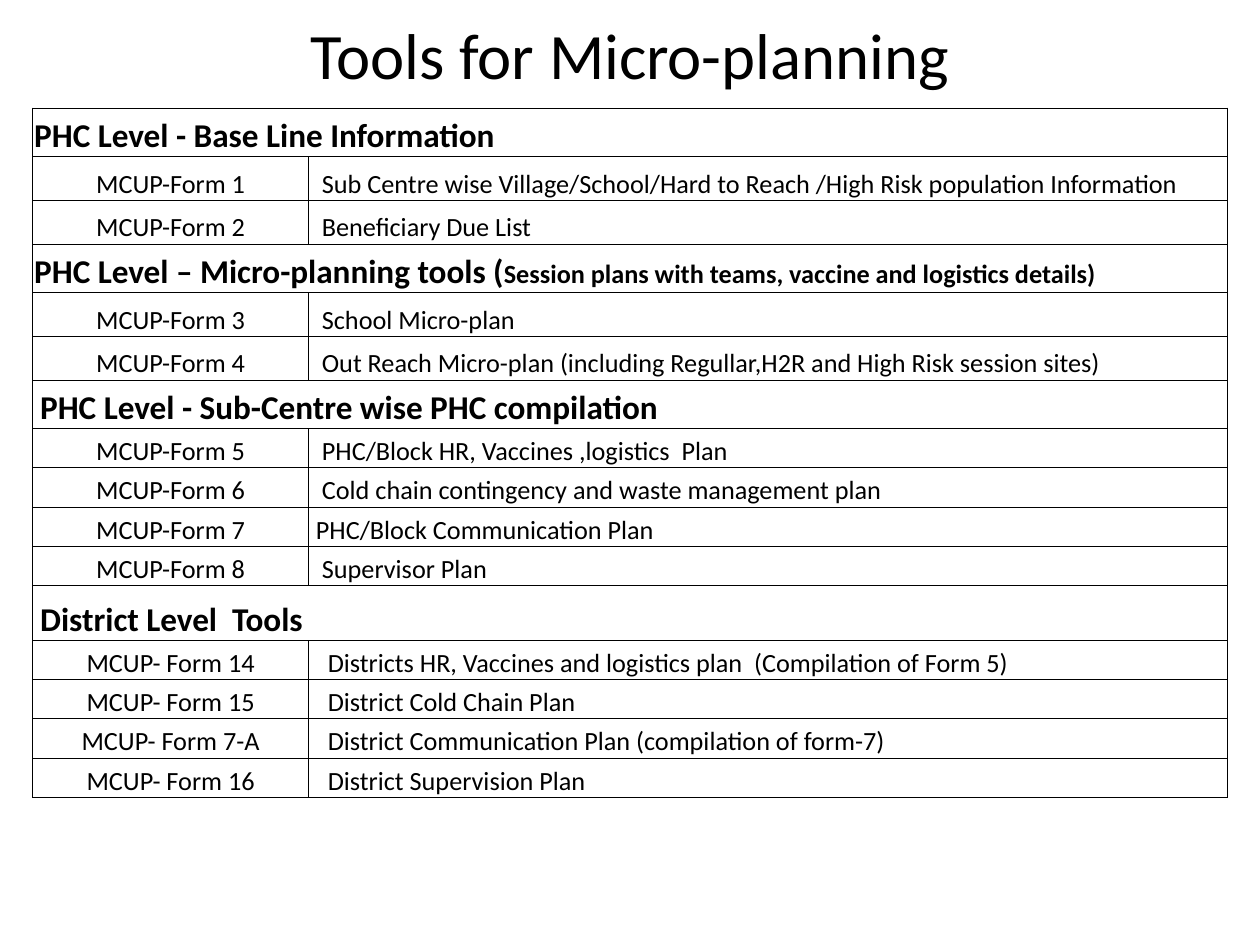
import pptx
import pptx.dml.color
import pptx.enum.text
import pptx.util
from lxml import etree
from pptx.oxml.ns import qn
from pptx.util import Cm

BLACK = pptx.dml.color.RGBColor(0x00, 0x00, 0x00)
FONT = "Calibri"
TITLE_SIZE, HEADING_SIZE, BODY_SIZE = 37, 19, 15

# Row heights and the step by which text is indented, in centimetres
HEADING, TALL_HEADING, TALL, SHORT = 0.98, 1.11, 0.88, 0.79
INSET, INDENT = 0.03, 0.12

# Each section: heading runs (text, size), heading indent, heading height,
# row height, and rows of (form, description, indent)
SECTIONS = [
    ([("PHC Level - Base Line Information", HEADING_SIZE)], 0, HEADING, TALL, [
        ("MCUP-Form 1", "Sub Centre wise Village/School/Hard to Reach /High Risk population Information", 2),
        ("MCUP-Form 2", "Beneficiary Due List", 2),
    ]),
    ([("PHC Level – Micro-planning tools (", HEADING_SIZE),
      ("Session plans with teams, vaccine and logistics details)", BODY_SIZE)], 0, HEADING, TALL, [
        ("MCUP-Form 3", "School Micro-plan", 2),
        ("MCUP-Form 4", "Out Reach Micro-plan (including Regullar,H2R and High Risk session sites)", 2),
    ]),
    ([("PHC Level - Sub-Centre wise PHC compilation", HEADING_SIZE)], 1, HEADING, SHORT, [
        ("MCUP-Form 5", "PHC/Block HR, Vaccines ,logistics  Plan", 2),
        ("MCUP-Form 6", "Cold chain contingency and waste management plan", 2),
        ("MCUP-Form 7", "PHC/Block Communication Plan", 1),
        ("MCUP-Form 8", "Supervisor Plan", 2),
    ]),
    ([("District Level  Tools", HEADING_SIZE)], 1, TALL_HEADING, SHORT, [
        ("MCUP- Form 14", "Districts HR, Vaccines and logistics plan  (Compilation of Form 5)", 3),
        ("MCUP- Form 15", "District Cold Chain Plan", 3),
        ("MCUP- Form 7-A", "District Communication Plan (compilation of form-7)", 3),
        ("MCUP- Form 16", "District Supervision Plan", 3),
    ]),
]


class SlideBuilder:
    """Holds the style and the current slide."""

    def __init__(self, slide):
        self.slide = slide

    def fill_paragraph(self, paragraph, runs, bold=False, centered=False):
        alignment = pptx.enum.text.PP_ALIGN
        paragraph.alignment = alignment.CENTER if centered else alignment.LEFT
        font = paragraph.font
        font.name, font.bold = FONT, bold
        font.size = pptx.util.Pt(runs[0][1])
        font.color.rgb = BLACK
        for text, size in runs:
            run = paragraph.add_run()
            run.text = text
            if len(runs) > 1:
                run.font.size = pptx.util.Pt(size)

    def title(self, text, left, top, width, height):
        shape = self.slide.shapes.add_textbox(Cm(left), Cm(top), Cm(width), Cm(height))
        frame = shape.text_frame
        frame.word_wrap = True
        frame.vertical_anchor = pptx.enum.text.MSO_ANCHOR.MIDDLE
        self.fill_paragraph(frame.paragraphs[0], [(text, TITLE_SIZE)], centered=True)

    def table(self, left, top, widths, heights):
        shape = self.slide.shapes.add_table(
            len(heights), len(widths), Cm(left), Cm(top), Cm(sum(widths)), Cm(sum(heights)))
        table = shape.table
        table.first_row = table.horz_banding = False
        for column, width in zip(table.columns, widths):
            column.width = Cm(width)
        for row, height in zip(table.rows, heights):
            row.height = Cm(height)
        for cell in table.iter_cells():
            self.frame_cell(cell)
        return table

    def frame_cell(self, cell):
        cell.margin_left = cell.margin_right = cell.margin_top = Cm(INSET)
        cell.margin_bottom = 0
        cell.vertical_anchor = pptx.enum.text.MSO_ANCHOR.BOTTOM
        properties = cell._tc.get_or_add_tcPr()
        for side in ("a:lnL", "a:lnR", "a:lnT", "a:lnB"):
            line = etree.SubElement(properties, qn(side), w=str(pptx.util.Pt(0.5)))
            fill = etree.SubElement(line, qn("a:solidFill"))
            etree.SubElement(fill, qn("a:srgbClr"), val=str(BLACK))
        cell.fill.background()

    def cell_text(self, cell, runs, indent=0, **style):
        cell.margin_left = Cm(INSET + indent * INDENT)
        self.fill_paragraph(cell.text_frame.paragraphs[0], runs, **style)


def main():
    presentation = pptx.Presentation()
    presentation.slide_width, presentation.slide_height = Cm(25.4), Cm(19.05)
    builder = SlideBuilder(presentation.slides.add_slide(presentation.slide_layouts[6]))

    # Table of forms by level
    heights = []
    for _, _, heading_height, row_height, rows in SECTIONS:
        heights += [heading_height] + [row_height] * len(rows)
    table = builder.table(0.66, 2.18, [5.56, 18.52], heights)

    index = 0
    for heading, heading_indent, _, _, rows in SECTIONS:
        table.cell(index, 0).merge(table.cell(index, 1))
        builder.cell_text(table.cell(index, 0), heading, heading_indent, bold=True)
        for index, (form, description, indent) in enumerate(rows, index + 1):
            builder.cell_text(table.cell(index, 0), [(form, BODY_SIZE)], centered=True)
            builder.cell_text(table.cell(index, 1), [(description, BODY_SIZE)], indent)
        index += 1

    # Title
    builder.title("Tools for Micro-planning", 0, 0, 25.4, 2.18)

    presentation.save("out.pptx")


if __name__ == "__main__":
    main()
